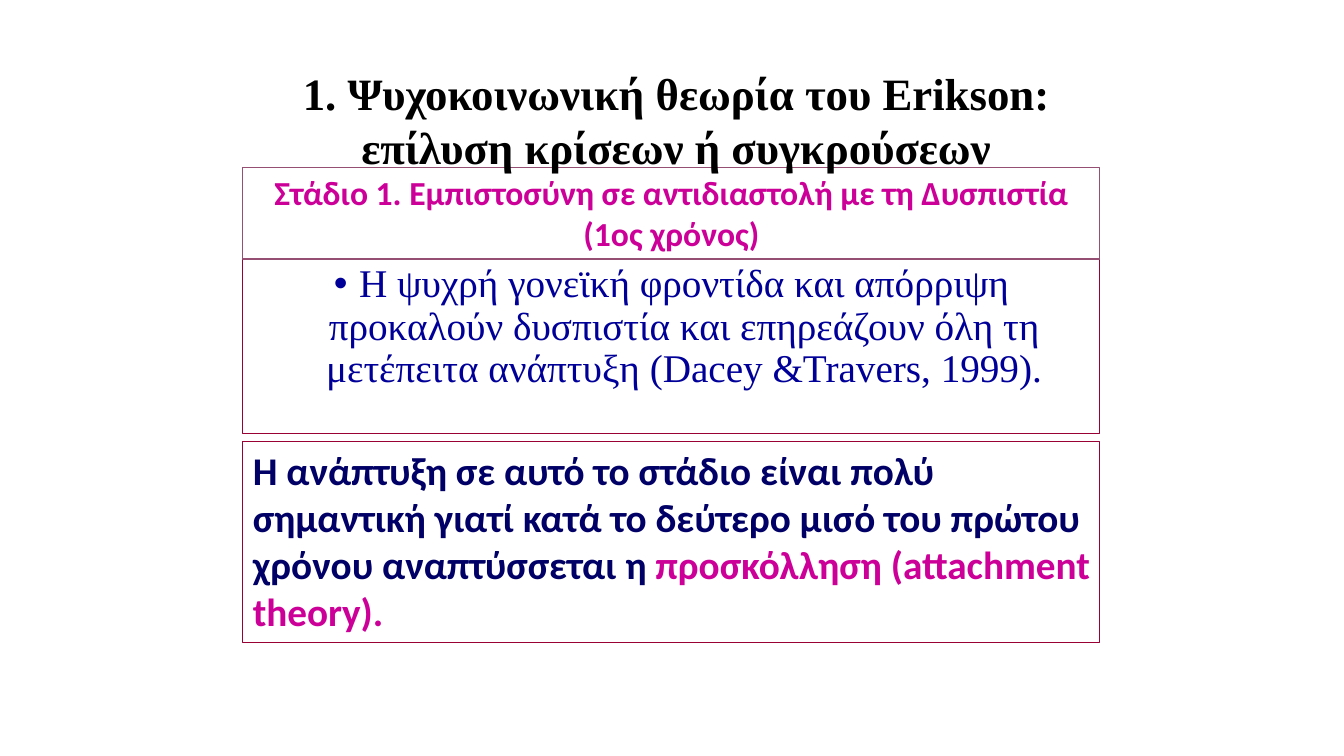
from dataclasses import dataclass
from typing import Optional

from lxml.etree import SubElement
from pptx import Presentation
from pptx.dml.color import RGBColor
from pptx.enum.shapes import MSO_SHAPE
from pptx.enum.text import MSO_ANCHOR, PP_ALIGN
from pptx.oxml.ns import qn
from pptx.util import Inches, Pt

COLORS = {
    "black": "000000",
    "blue": "000099",
    "navy": "000066",
    "magenta": "CC0099",
    "crimson": "990033",
    "plum": "954F72",
}
SERIF, SANS = "Times New Roman", "Calibri"
BOX_LEFT, BOX_WIDTH = 2.41, 8.5


@dataclass
class Run:
    text: str
    color: str


@dataclass
class Box:
    top: float
    height: float
    runs: list[Run]
    font: dict
    left: float = BOX_LEFT
    width: float = BOX_WIDTH
    line: Optional[str] = None
    align: PP_ALIGN = PP_ALIGN.CENTER
    bullet: bool = False


BOXES = [
    Box(2.57, 1.73,
        [Run("Η ψυχρή γονεϊκή φροντίδα και απόρριψη προκαλούν δυσπιστία και "
             "επηρεάζουν όλη τη μετέπειτα ανάπτυξη (Dacey &Travers, 1999).", "blue")],
        {"name": SERIF, "size": Pt(28), "bold": False}, line="crimson", bullet=True),
    Box(1.66, 0.91,
        [Run("Στάδιο 1. Εμπιστοσύνη σε αντιδιαστολή με τη Δυσπιστία (1ος χρόνος)",
             "magenta")],
        {"name": SANS, "size": Pt(24), "bold": True}, line="plum"),
    Box(4.38, 1.99,
        [Run("Η ανάπτυξη σε αυτό το στάδιο είναι πολύ σημαντική γιατί κατά το "
             "δεύτερο μισό του πρώτου χρόνου αναπτύσσεται η ", "navy"),
         Run("προσκόλληση (attachment theory).", "magenta")],
        {"name": SANS, "size": Pt(28), "bold": True}, line="crimson",
        align=PP_ALIGN.LEFT),
    Box(0.6, 1.18,
        [Run("1. Ψυχοκοινωνική θεωρία του Erikson: επίλυση κρίσεων ή συγκρούσεων",
             "black")],
        {"name": SERIF, "size": Pt(32), "bold": True}, left=2.34, width=8.74),
]


def rgb(name: str) -> RGBColor:
    return RGBColor.from_string(COLORS[name])


def add_bullet(p) -> None:
    """Give the paragraph a round bullet, a hanging indent and tight lines."""
    p.line_spacing = 0.9
    p.space_before = Pt(10)
    pPr = p._p.get_or_add_pPr()
    pPr.set("marL", str(Inches(0.25)))
    pPr.set("indent", str(-Inches(0.25)))
    SubElement(pPr, qn("a:buFont"), typeface="Arial")
    SubElement(pPr, qn("a:buChar"), char="•")


def add_box(s, box: Box) -> None:
    place = [Inches(v) for v in (box.left, box.top, box.width, box.height)]
    if box.line:
        sp = s.shapes.add_shape(MSO_SHAPE.RECTANGLE, *place)
        sp.shadow.inherit = False
        sp.fill.background()
        sp.line.color.rgb = rgb(box.line)
        sp.line.width = Pt(0.75)
    else:
        sp = s.shapes.add_textbox(*place)
    tf = sp.text_frame
    tf.word_wrap = True
    tf.vertical_anchor = MSO_ANCHOR.TOP
    p = tf.paragraphs[0]
    p.alignment = box.align
    if box.bullet:
        add_bullet(p)
    for run in box.runs:
        r = p.add_run()
        r.text = run.text
        for key, value in box.font.items():
            setattr(r.font, key, value)
        r.font.color.rgb = rgb(run.color)


def main() -> None:
    prs = Presentation()
    prs.slide_width, prs.slide_height = Inches(13.33), Inches(7.5)
    s = prs.slides.add_slide(prs.slide_layouts[6])
    for box in BOXES:
        add_box(s, box)
    prs.save("out.pptx")


if __name__ == "__main__":
    main()
